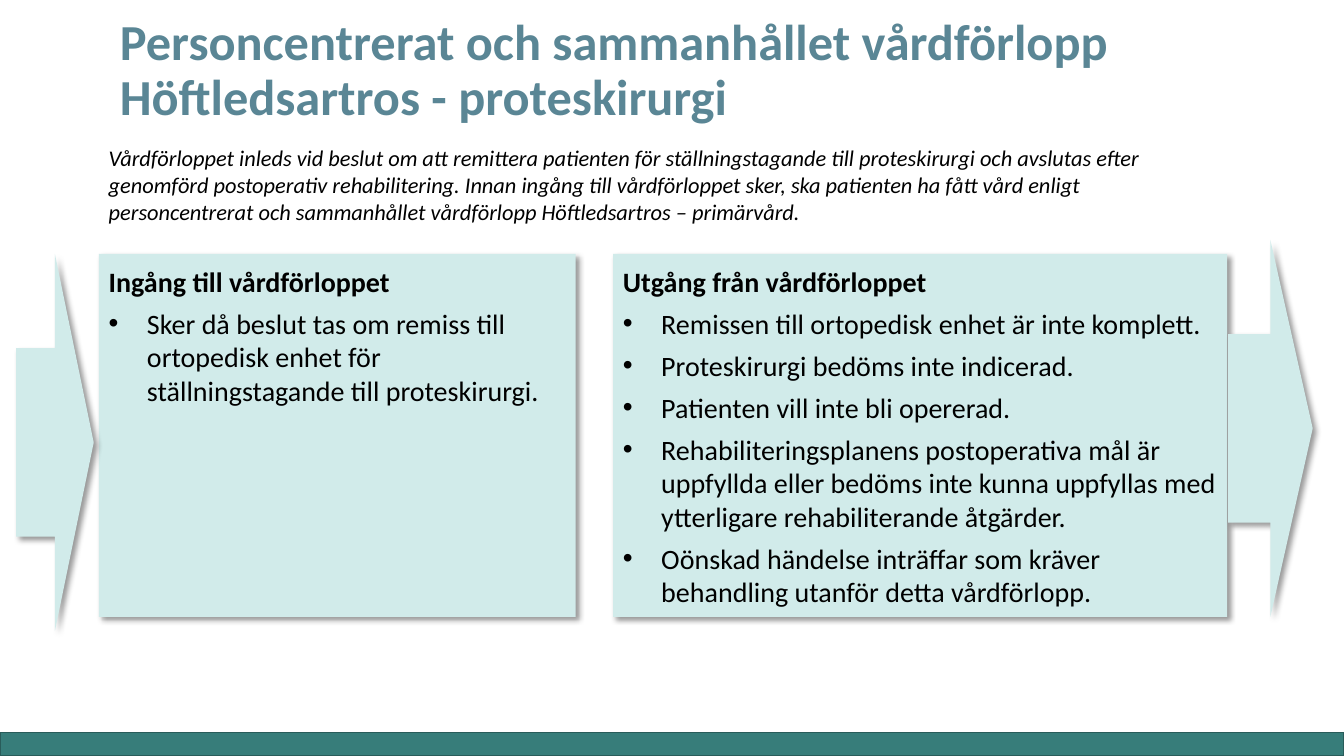
from lxml.etree import SubElement
from pptx import Presentation
from pptx.dml.color import RGBColor
from pptx.enum.shapes import MSO_SHAPE as SHAPE
from pptx.enum.text import MSO_ANCHOR as ANCHOR, PP_ALIGN as ALIGN
from pptx.oxml import parse_xml
from pptx.oxml.ns import nsdecls, qn
from pptx.util import Inches, Pt

TEAL, MINT, BLUE, BLACK = "377D7A", "D1EBEA", "5A8695", "000000"
SHADOW = (
    f'<a:effectLst {nsdecls("a")}><a:outerShdw blurRad="50800" dist="38100" '
    'dir="2700000" algn="tl" rotWithShape="0"><a:srgbClr val="000000">'
    '<a:alpha val="40000"/></a:srgbClr></a:outerShdw></a:effectLst>'
)


def color(value):
    return RGBColor.from_string(value)


def write(tf, lines, size, fill=BLACK, bold=False, italic=False):
    tf.word_wrap = True
    for i, line in enumerate(lines):
        p = tf.paragraphs[0] if i == 0 else tf.add_paragraph()
        p.alignment = ALIGN.LEFT
        r = p.add_run()
        r.text = line
        r.font.name, r.font.size = "Calibri", Pt(size)
        r.font.bold, r.font.italic = bold, italic
        r.font.color.rgb = color(fill)


prs = Presentation()
prs.slide_width, prs.slide_height = Inches(13.33), Inches(7.5)
s = prs.slides.add_slide(prs.slide_layouts[6])

# Footer bar
bar = s.shapes.add_shape(SHAPE.RECTANGLE, 0, Inches(7.27), Inches(13.33), Inches(0.23))
bar.shadow.inherit = False
bar.fill.solid()
bar.fill.fore_color.rgb = color(TEAL)
bar.line.color.rgb = color("295C5A")
bar.line.width = Pt(1)

# Title
title = s.shapes.add_textbox(Inches(1.09), Inches(0.72), Inches(10.49), Inches(0.58))
title.text_frame.vertical_anchor = ANCHOR.BOTTOM
write(title.text_frame,
      ["Personcentrerat och sammanhållet vårdförlopp Höftledsartros - proteskirurgi"],
      36, BLUE, bold=True)
title.text_frame.paragraphs[0].line_spacing = 0.9

# Entry and exit panels, then the arrows in and out
panels = [
    (SHAPE.RECTANGLE, 0.98, 2.52, 4.73, 3.6, "Ingång till vårdförloppet", [
        "Sker då beslut tas om remiss till ortopedisk enhet för ställningstagande "
        "till proteskirurgi.",
    ]),
    (SHAPE.RECTANGLE, 6.08, 2.52, 6.09, 3.6, "Utgång från vårdförloppet", [
        "Remissen till ortopedisk enhet är inte komplett.",
        "Proteskirurgi bedöms inte indicerad.",
        "Patienten vill inte bli opererad.",
        "Rehabiliteringsplanens postoperativa mål är uppfyllda eller bedöms inte kunna "
        "uppfyllas med ytterligare rehabiliterande åtgärder.",
        "Oönskad händelse inträffar som kräver behandling utanför detta vårdförlopp.",
    ]),
    (SHAPE.RIGHT_ARROW, 0.16, 2.52, 0.77, 3.74, None, []),
    (SHAPE.RIGHT_ARROW, 12.18, 2.38, 0.84, 3.74, None, []),
]
for kind, x, y, w, h, heading, bullets in panels:
    sp = s.shapes.add_shape(kind, Inches(x), Inches(y), Inches(w), Inches(h))
    sp.fill.solid()
    sp.fill.fore_color.rgb = color(MINT)
    sp.line.fill.background()
    sp._element.spPr.append(parse_xml(SHADOW))
    if not heading:
        continue
    tf = sp.text_frame
    tf.vertical_anchor = ANCHOR.TOP
    write(tf, [heading] + bullets, 20)
    head, *items = tf.paragraphs
    head.line_spacing = 1.15
    head.runs[0].font.bold = True
    for p in items:
        p.space_before = Pt(6)
        pPr = p._p.get_or_add_pPr()
        pPr.set("marL", str(Inches(0.38)))
        pPr.set("indent", str(-Inches(0.38)))
        SubElement(pPr, qn("a:buFont")).set("typeface", "Arial")
        SubElement(pPr, qn("a:buChar")).set("char", "•")

# Introduction
intro = s.shapes.add_textbox(Inches(0.98), Inches(1.38), Inches(11.05), Inches(1.21))
write(intro.text_frame, [
    "Vårdförloppet inleds vid beslut om att remittera patienten för ställningstagande till "
    "proteskirurgi och avslutas efter genomförd postoperativ rehabilitering. Innan ingång "
    "till vårdförloppet sker, ska patienten ha fått vård enligt personcentrerat och "
    "sammanhållet vårdförlopp Höftledsartros – primärvård.",
], 16, italic=True)

prs.save("out.pptx")
